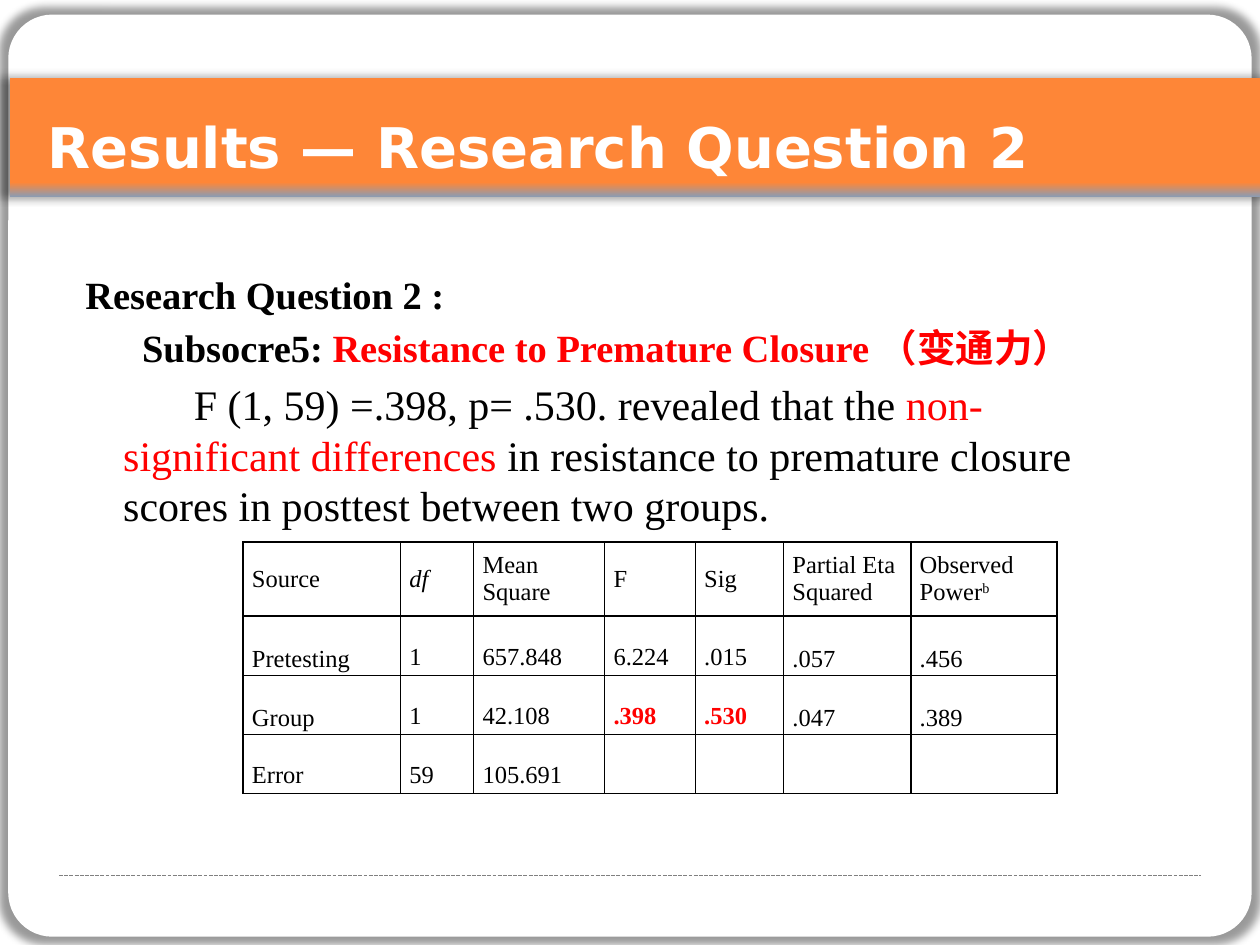
from dataclasses import dataclass

from pptx import Presentation
from pptx.dml.color import RGBColor
from pptx.enum.dml import MSO_LINE
from pptx.enum.shapes import MSO_CONNECTOR, MSO_SHAPE
from pptx.enum.text import MSO_ANCHOR
from pptx.oxml import parse_xml
from pptx.oxml.ns import nsdecls, qn
from pptx.util import Inches, Pt

COLORS = {
    "white": "FFFFFF",
    "black": "000000",
    "red": "FF0000",
    "orange": "FE8637",
    "slate": "8E9BB0",
    "gray": "808080",
}
TITLE_FONT = "DejaVu Sans"
BODY_FONT = "Times New Roman"


@dataclass
class Span:
    text: str
    color: str = "black"


@dataclass
class BodyPara:
    spans: list[Span]
    size: int
    bold: bool
    margin: float
    indent: float = 0
    before: float = 0


BODY = [
    BodyPara([Span("Research Question 2 :")], 22, True, 0.08),
    BodyPara([Span("Subsocre5: "),
              Span("Resistance to Premature Closure （变通力）", "red")],
             22, True, 0.53, before=4),
    BodyPara([Span("F (1, 59) =.398, p= .530. revealed that the "),
              Span("non-significant differences ", "red"),
              Span("in resistance to premature closure scores in posttest "
                   "between two groups.")], 24, False, 0.38, indent=0.56, before=5),
]

HEADER = ["Source", "df", "Mean Square", "F", "Sig", "Partial Eta Squared", "Observed\nPower"]
RESULTS = [
    ["Pretesting", "1", "657.848", "6.224", ".015", ".057", ".456"],
    ["Group", "1", "42.108", ".398", ".530", ".047", ".389"],
    ["Error", "59", "105.691", "", "", "", ""],
]
KEY_VALUES = {".398", ".530"}
COLUMN_WIDTHS = [1.25, 0.58, 1.04, 0.72, 0.7, 1.01, 1.16]
ROW_HEIGHTS = [0.59, 0.47, 0.47, 0.47]


def rgb(name: str) -> RGBColor:
    return RGBColor.from_string(COLORS[name])


def add_soft_shadow(shape) -> None:
    """Add a blurred shadow slightly larger than the shape, so it shows on every side."""
    shape.shadow.inherit = False
    effects = shape.element.spPr.find(qn("a:effectLst"))
    effects.append(parse_xml(
        f'<a:outerShdw {nsdecls("a")} blurRad="{Pt(5)}" dist="0" dir="0" '
        f'sx="101500" sy="101500" algn="ctr" rotWithShape="0">'
        f'<a:srgbClr val="{COLORS["black"]}"><a:alpha val="40000"/></a:srgbClr></a:outerShdw>'))


def add_frame(slide) -> None:
    frame = slide.shapes.add_shape(MSO_SHAPE.ROUNDED_RECTANGLE, Inches(0.08), Inches(0.13),
                                   Inches(9.84), Inches(7.29))
    frame.adjustments[0] = 0.046
    frame.fill.solid()
    frame.fill.fore_color.rgb = rgb("white")
    frame.line.color.rgb = rgb("white")
    frame.line.width = Pt(2)
    add_soft_shadow(frame)


def add_footer_rule(slide) -> None:
    rule = slide.shapes.add_connector(MSO_CONNECTOR.STRAIGHT, Inches(0.47), Inches(6.95),
                                      Inches(9.53), Inches(6.95))
    rule.line.color.rgb = rgb("gray")
    rule.line.width = Pt(0.75)
    rule.line.dash_style = MSO_LINE.SQUARE_DOT
    rule.element.spPr.append(parse_xml(f'<a:effectLst {nsdecls("a")}/>'))


def add_title(slide) -> None:
    band = slide.shapes.add_shape(MSO_SHAPE.RECTANGLE, Inches(0.08), Inches(0.62),
                                  Inches(9.92), Inches(0.94))
    band.fill.gradient()
    band.fill.gradient_angle = 270
    for stop, position, color in zip(band.fill.gradient_stops, (0.88, 1), ("orange", "slate")):
        stop.position = position
        stop.color.rgb = rgb(color)
    band.line.fill.background()
    add_soft_shadow(band)

    box = slide.shapes.add_textbox(Inches(0.28), Inches(0.84), Inches(9), Inches(0.64))
    box.text_frame.word_wrap = True
    para = box.text_frame.paragraphs[0]
    para.text = "Results — Research Question 2"
    para.font.name = TITLE_FONT
    para.font.size = Pt(32)
    para.font.bold = True
    para.font.color.rgb = rgb("white")


def add_body(slide) -> None:
    box = slide.shapes.add_textbox(Inches(0.5), Inches(2.1), Inches(8.67), Inches(2.15))
    frame = box.text_frame
    frame.word_wrap = True
    for number, item in enumerate(BODY):
        para = frame.add_paragraph() if number else frame.paragraphs[0]
        properties = para._p.get_or_add_pPr()
        properties.set("marL", str(Inches(item.margin)))
        properties.set("indent", str(Inches(item.indent)))
        para.space_before = Pt(item.before)
        para.font.name = BODY_FONT
        para.font.size = Pt(item.size)
        para.font.bold = item.bold
        for span in item.spans:
            run = para.add_run()
            run.text = span.text
            run.font.color.rgb = rgb(span.color)


def add_borders(cell) -> None:
    """Draw all four edges; they must come before the cell's fill element."""
    properties = cell._tc.get_or_add_tcPr()
    for index, edge in enumerate(("lnL", "lnR", "lnT", "lnB")):
        properties.insert(index, parse_xml(
            f'<a:{edge} {nsdecls("a")} w="{Pt(1)}"><a:solidFill>'
            f'<a:srgbClr val="{COLORS["black"]}"/></a:solidFill></a:{edge}>'))


def fill_cell(cell, text: str, row: int, column: int) -> None:
    cell.fill.background()
    add_borders(cell)
    cell.margin_left = cell.margin_right = Inches(0.07)
    cell.margin_top = cell.margin_bottom = 0
    centered = row == 0 or (row < 3 and column in (0, 5, 6))
    cell.vertical_anchor = MSO_ANCHOR.MIDDLE if centered else MSO_ANCHOR.TOP
    cell.text = text
    for para in cell.text_frame.paragraphs:
        if row:
            para.line_spacing = 2.0
        para.font.name = BODY_FONT
        para.font.size = Pt(14)
        para.font.bold = text in KEY_VALUES
        para.font.italic = text == "df"
        para.font.color.rgb = rgb("red" if text in KEY_VALUES else "black")


def add_results_table(slide) -> None:
    rows = [HEADER, *RESULTS]
    table = slide.shapes.add_table(len(rows), len(HEADER), Inches(1.93), Inches(4.3),
                                   Inches(sum(COLUMN_WIDTHS)), Inches(sum(ROW_HEIGHTS))).table
    table.first_row = table.horz_banding = False
    for column, width in zip(table.columns, COLUMN_WIDTHS):
        column.width = Inches(width)
    for row, height in zip(table.rows, ROW_HEIGHTS):
        row.height = Inches(height)
    for row, texts in enumerate(rows):
        for column, text in enumerate(texts):
            fill_cell(table.cell(row, column), text, row, column)

    note_mark = table.cell(0, len(HEADER) - 1).text_frame.paragraphs[-1].add_run()
    note_mark.text = "b"
    note_mark.font._element.set("baseline", "30000")


def main() -> None:
    deck = Presentation()
    deck.slide_width = Inches(10)
    deck.slide_height = Inches(7.5)
    slide = deck.slides.add_slide(deck.slide_layouts[6])
    add_frame(slide)
    add_footer_rule(slide)
    add_title(slide)
    add_body(slide)
    add_results_table(slide)
    deck.save("out.pptx")


if __name__ == "__main__":
    main()
